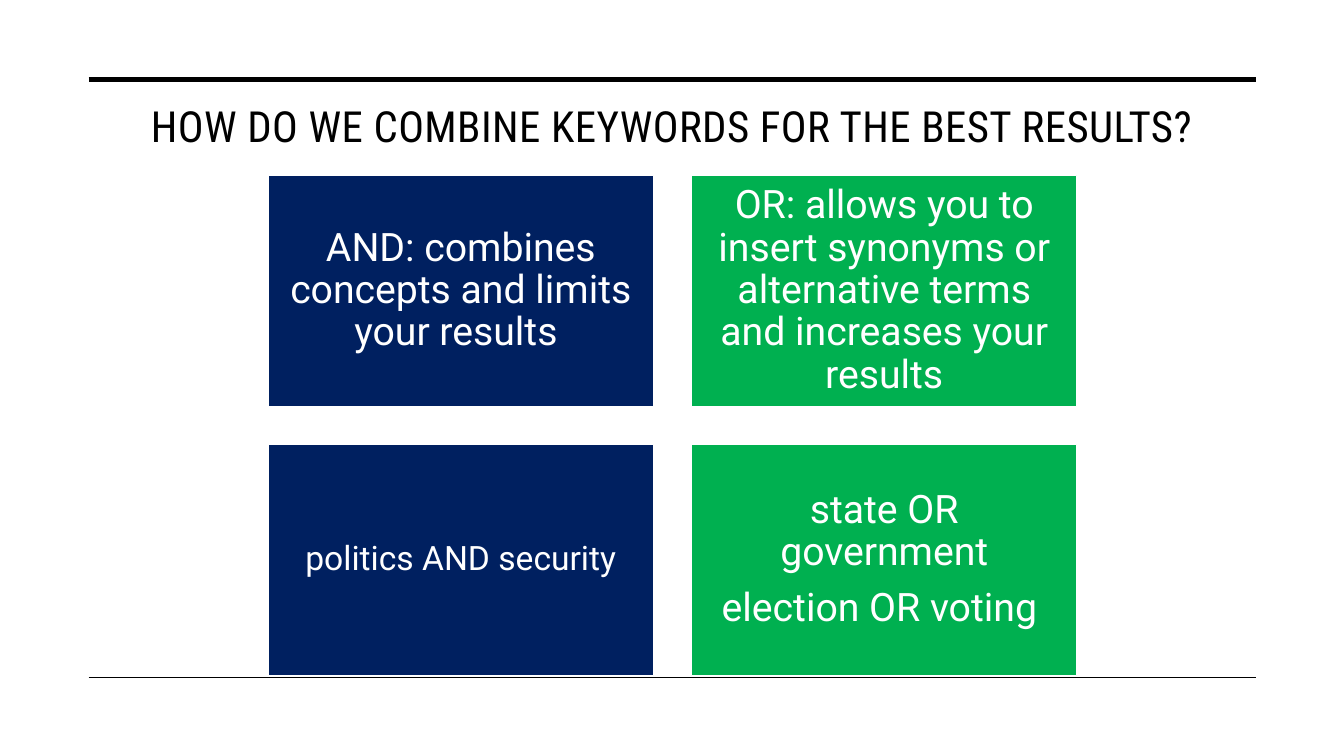
from pptx import Presentation
from pptx.dml.color import RGBColor
from pptx.enum.shapes import MSO_CONNECTOR, MSO_SHAPE
from pptx.enum.text import MSO_ANCHOR, PP_ALIGN
from pptx.util import Inches, Pt
from lxml.etree import SubElement
from pptx.oxml.ns import qn

WIDE, HIGH = 13.33, 7.5
LEFT, TOP = 2.66, 1.74
CARD_W, CARD_H = 3.82, 2.29
GAP = 0.38
NAVY, GREEN = "002060", "00B050"
CARDS = [
    [(["AND: combines concepts and limits your results "], NAVY, 28),
     (["OR: allows you to insert synonyms or alternative terms and increases your results"], GREEN, 28)],
    [(["politics AND security"], NAVY, 24),
     (["state OR government", "election OR voting "], GREEN, 28)],
]


def color(code):
    return RGBColor.from_string(code)


def write(shape, lines, size, font="Roboto", ink="FFFFFF", inset=0.1,
          lead=1, after=0, track=0):
    frame = shape.text_frame
    frame.word_wrap = True
    frame.vertical_anchor = MSO_ANCHOR.MIDDLE
    frame.margin_left = frame.margin_right = Inches(inset)
    frame.margin_top = frame.margin_bottom = Inches(inset)
    for row, line in enumerate(lines):
        para = frame.paragraphs[0] if row == 0 else frame.add_paragraph()
        para.alignment = PP_ALIGN.CENTER
        para.line_spacing = lead
        para.space_after = Pt(after)
        run = para.add_run()
        run.text = line
        run.font.size = Pt(size)
        run.font.name = font
        run.font.color.rgb = color(ink)
        if track:
            run.font._element.set("spc", str(track))


def rule(slide, y, weight):
    line = slide.shapes.add_connector(
        MSO_CONNECTOR.STRAIGHT, Inches(0.88), Inches(y), Inches(12.46), Inches(y))
    line.line.color.rgb = color("000000")
    line.line.width = Pt(weight)
    SubElement(line._element.spPr, qn("a:effectLst"))


def title(slide, text):
    box = slide.shapes.add_textbox(Inches(0.92), Inches(0.65), Inches(11.49), Inches(1.18))
    write(box, [text], 30.6, font="Roboto Condensed", ink="000000", track=30)


def card(slide, col, row, lines, fill, size):
    x = LEFT + col * (CARD_W + GAP)
    y = TOP + row * (CARD_H + GAP)
    box = slide.shapes.add_shape(
        MSO_SHAPE.RECTANGLE, Inches(x), Inches(y), Inches(CARD_W), Inches(CARD_H))
    box.shadow.inherit = False
    box.fill.solid()
    box.fill.fore_color.rgb = color(fill)
    box.line.color.rgb = color("FFFFFF")
    box.line.width = Pt(1)
    write(box, lines, size, inset=0.12 if size == 28 else 0.1,
          lead=0.9, after=round(size * 0.35, 1))


def main():
    deck = Presentation()
    deck.slide_width, deck.slide_height = Inches(WIDE), Inches(HIGH)
    slide = deck.slides.add_slide(deck.slide_layouts[6])
    rule(slide, 0.79, 3.5)
    rule(slide, 6.72, 1)
    title(slide, "HOW DO WE COMBINE KEYWORDS FOR THE BEST RESULTS?")
    for row, cards in enumerate(CARDS):
        for col, (lines, fill, size) in enumerate(cards):
            card(slide, col, row, lines, fill, size)
    deck.save("out.pptx")


if __name__ == "__main__":
    main()
